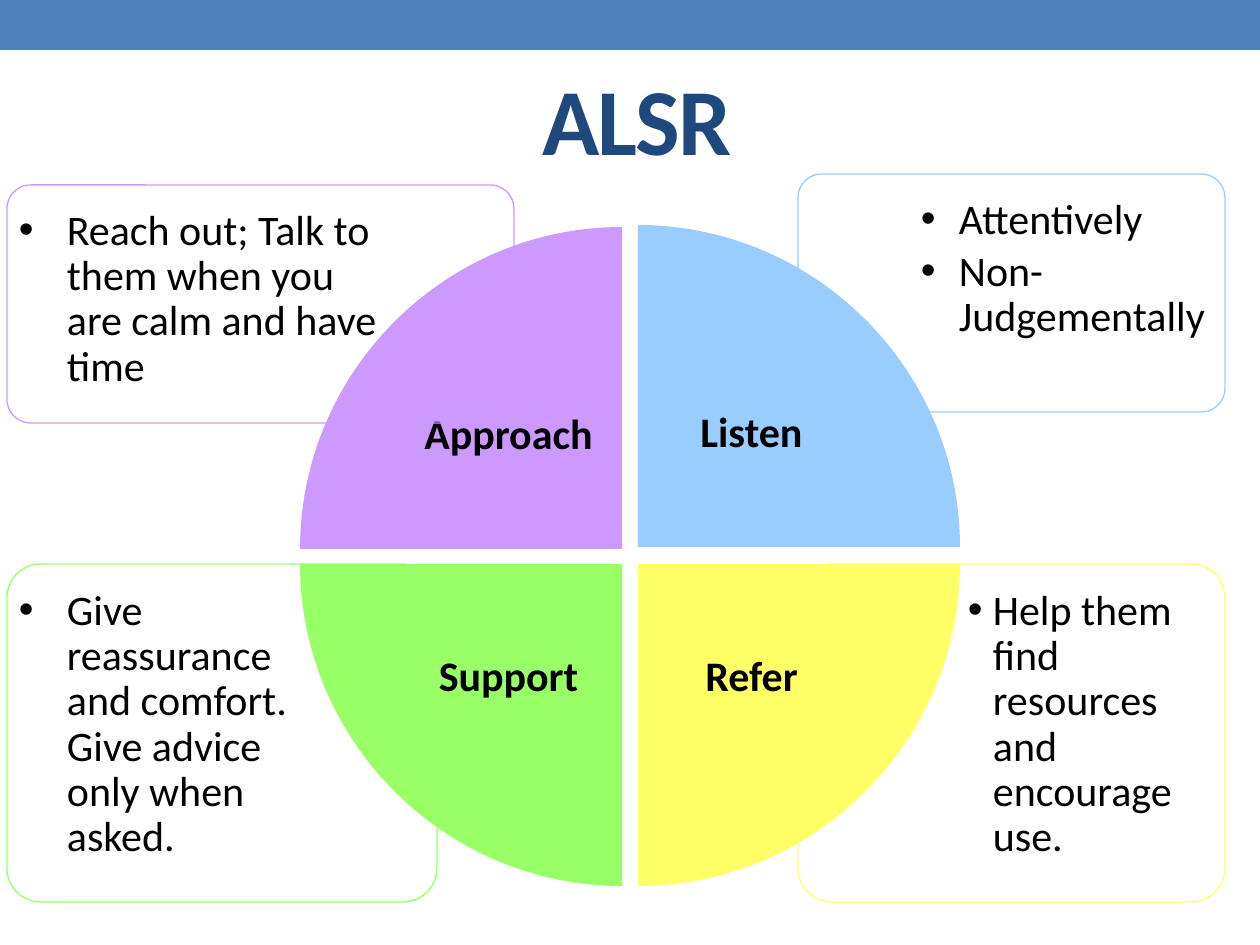
import math

import lxml.etree
import pptx
import pptx.dml.color
import pptx.enum.shapes
import pptx.enum.text
import pptx.oxml.ns
import pptx.util

EMU_PER_PX = 914400 / 126
THEME = {
    "font": "Calibri", "title_size": 54, "text_size": 24,
    "band": "4F81BD", "title": "1F497D", "text": "000000",
    "approach": "CC99FF", "listen": "99CCFF", "support": "99FF66", "refer": "FFFF66",
}
RADIUS = 322
# Share of the radius that a Bezier handle takes to follow a quarter circle.
HANDLE = 0.55
CORNER = 0.1
# A rounded rectangle already insets its text by this share of the corner radius.
CORNER_INSET = 1 - math.sqrt(0.5)
OUTER, INNER = 116, 21

# Wedge: left, top and the horizontal and vertical direction it bulges in.
# Panel: left, top, width, height; margins run left, top, right, bottom.
QUADRANTS = [
    dict(name="Approach", wedge=(300, 227), direction=(-1, -1),
         panel=(7, 185, 507, 238), margins=(12, 24, 123, 72), indent=(48, 48),
         points=["Reach out; Talk to them when you are calm and have time"]),
    dict(name="Listen", wedge=(638, 225), direction=(1, -1),
         panel=(798, 174, 427, 238), margins=(123, 24, 12, 72), indent=(38, 38),
         points=["Attentively", "Non-Judgementally"]),
    dict(name="Support", wedge=(300, 564), direction=(-1, 1),
         panel=(7, 564, 430, 338), margins=(12, 25, 123, 13), indent=(48, 48),
         points=["Give reassurance and comfort. Give advice only when asked."]),
    dict(name="Refer", wedge=(638, 564), direction=(1, 1),
         panel=(798, 564, 427, 338), margins=(123, 25, 12, 13), indent=(72, 25),
         points=["Help them find resources and encourage use."]),
]


def px(length):
    return pptx.util.Emu(round(length * EMU_PER_PX))


def write_text(shape, lines, *, size=THEME["text_size"], color=THEME["text"], bold=False,
               align="CENTER", anchor="MIDDLE", margins=None, indent=None,
               line_spacing=0.9, space_after=0, tracking=None):
    """Fill a shape with paragraphs; indent is (text, hanging) in px and adds bullets."""
    frame = shape.text_frame
    frame.text = "\n".join(lines)
    frame.word_wrap = True
    frame.auto_size = pptx.enum.text.MSO_AUTO_SIZE.NONE
    frame.vertical_anchor = pptx.enum.text.MSO_ANCHOR[anchor]
    if margins:
        (frame.margin_left, frame.margin_top,
         frame.margin_right, frame.margin_bottom) = [px(margin) for margin in margins]
    for paragraph in frame.paragraphs:
        paragraph.alignment = pptx.enum.text.PP_ALIGN[align]
        paragraph.line_spacing = line_spacing
        paragraph.space_after = pptx.util.Pt(space_after)
        run = paragraph.runs[0]
        run.font.name = THEME["font"]
        run.font.size = pptx.util.Pt(size)
        run.font.bold = bold
        run.font.color.rgb = pptx.dml.color.RGBColor.from_string(color)
        if tracking:
            run.font._element.set("spc", str(tracking))
        if indent:
            properties = paragraph._p.get_or_add_pPr()
            properties.set("marL", str(px(indent[0])))
            properties.set("indent", str(-px(indent[1])))
            for tag, key, value in [("a:buFont", "typeface", "Arial"), ("a:buChar", "char", "•")]:
                lxml.etree.SubElement(properties, pptx.oxml.ns.qn(tag)).set(key, value)


presentation = pptx.Presentation()
presentation.slide_width = px(1260)
presentation.slide_height = px(945)
slide = presentation.slides.add_slide(presentation.slide_layouts[5])
shapes = slide.shapes
preset = pptx.enum.shapes.MSO_SHAPE

band = shapes.add_shape(preset.RECTANGLE, 0, 0, px(1260), px(50))
band.shadow.inherit = False
band.fill.solid()
band.fill.fore_color.rgb = pptx.dml.color.RGBColor.from_string(THEME["band"])
band.line.fill.background()

title = shapes.title
title.left, title.top, title.width, title.height = [px(side) for side in (70, 50, 1134, 136)]
write_text(title, ["ALSR"], size=THEME["title_size"], color=THEME["title"], bold=True,
           line_spacing=1.0, tracking=-100)

for quadrant in QUADRANTS:
    color = pptx.dml.color.RGBColor.from_string(THEME[quadrant["name"].lower()])
    left, top = quadrant["wedge"]
    across, down = quadrant["direction"]
    center_x = left + RADIUS * (across < 0)
    center_y = top + RADIUS * (down < 0)
    side_end = (center_x + across * RADIUS, center_y)
    pole_end = (center_x, center_y + down * RADIUS)
    builder = shapes.build_freeform(px(center_x), px(center_y))
    builder.add_line_segments([(px(x), px(y)) for x, y in (side_end, pole_end)], close=True)
    wedge = builder.convert_to_shape()

    # Bend the line between the two ends into a quarter circle.
    chord = wedge._element.findall(".//" + pptx.oxml.ns.qn("a:lnTo"))[1]
    curve = lxml.etree.Element(pptx.oxml.ns.qn("a:cubicBezTo"))
    handles = [(side_end[0], side_end[1] + down * RADIUS * HANDLE),
               (pole_end[0] + across * RADIUS * HANDLE, pole_end[1])]
    for x, y in handles + [pole_end]:
        point = lxml.etree.SubElement(curve, pptx.oxml.ns.qn("a:pt"))
        point.set("x", str(px(x - left)))
        point.set("y", str(px(y - top)))
    chord.getparent().replace(chord, curve)

    wedge.shadow.inherit = False
    wedge.fill.solid()
    wedge.fill.fore_color.rgb = color
    wedge.line.fill.background()
    horizontal = (OUTER, INNER) if across < 0 else (INNER, OUTER)
    vertical = (OUTER, INNER) if down < 0 else (INNER, OUTER)
    write_text(wedge, [quadrant["name"]], bold=True,
               margins=(horizontal[0], vertical[0], horizontal[1], vertical[1]))

    panel = shapes.add_shape(preset.ROUNDED_RECTANGLE, *[px(side) for side in quadrant["panel"]])
    panel.adjustments[0] = CORNER
    panel.shadow.inherit = False
    panel.fill.background()
    panel.line.color.rgb = color
    panel.line.width = pptx.util.Pt(0.75)
    inset = CORNER * min(quadrant["panel"][2:]) * CORNER_INSET
    write_text(panel, quadrant["points"], align="LEFT", anchor="TOP", space_after=4,
               margins=[margin - inset for margin in quadrant["margins"]],
               indent=quadrant["indent"])

presentation.save("out.pptx")
